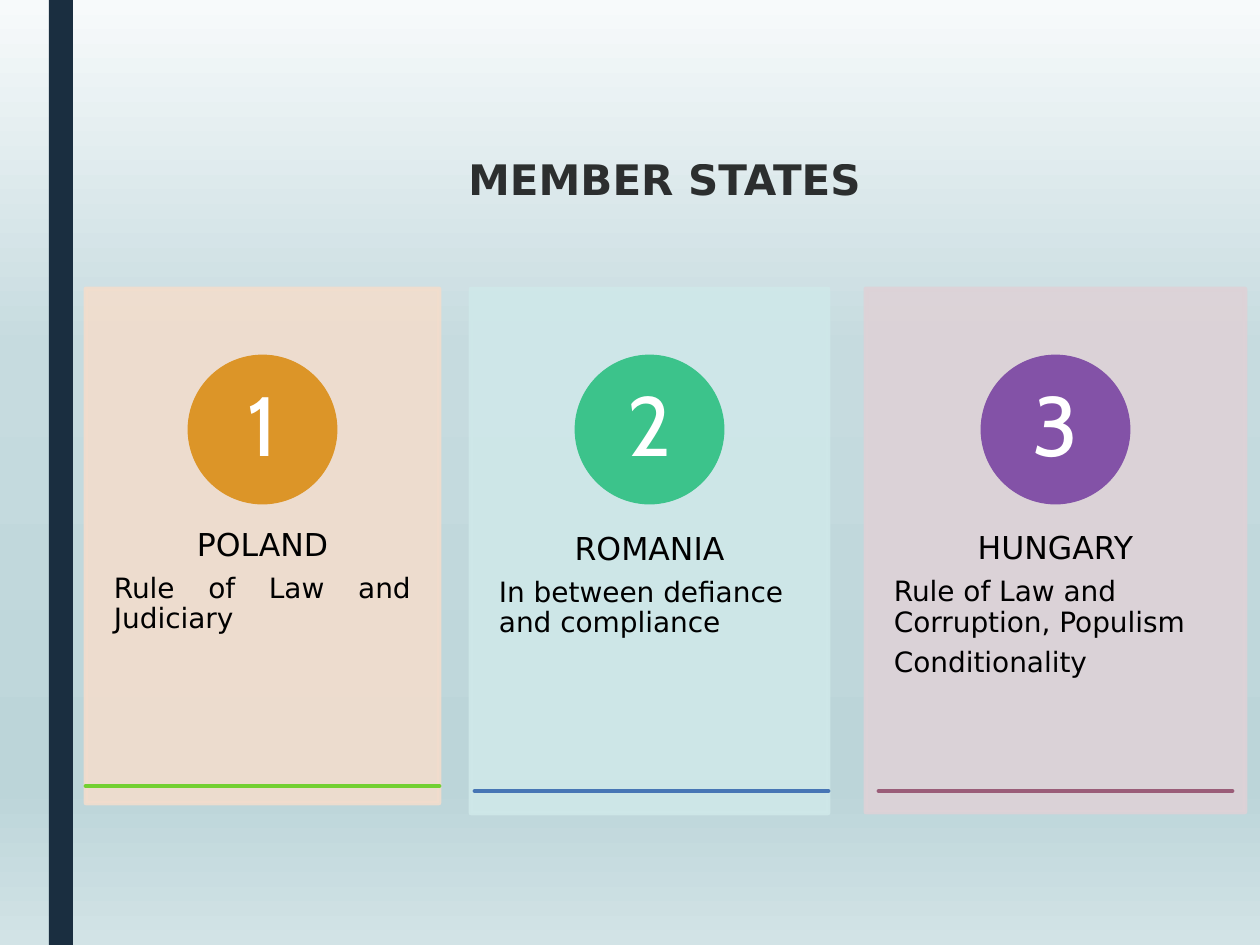
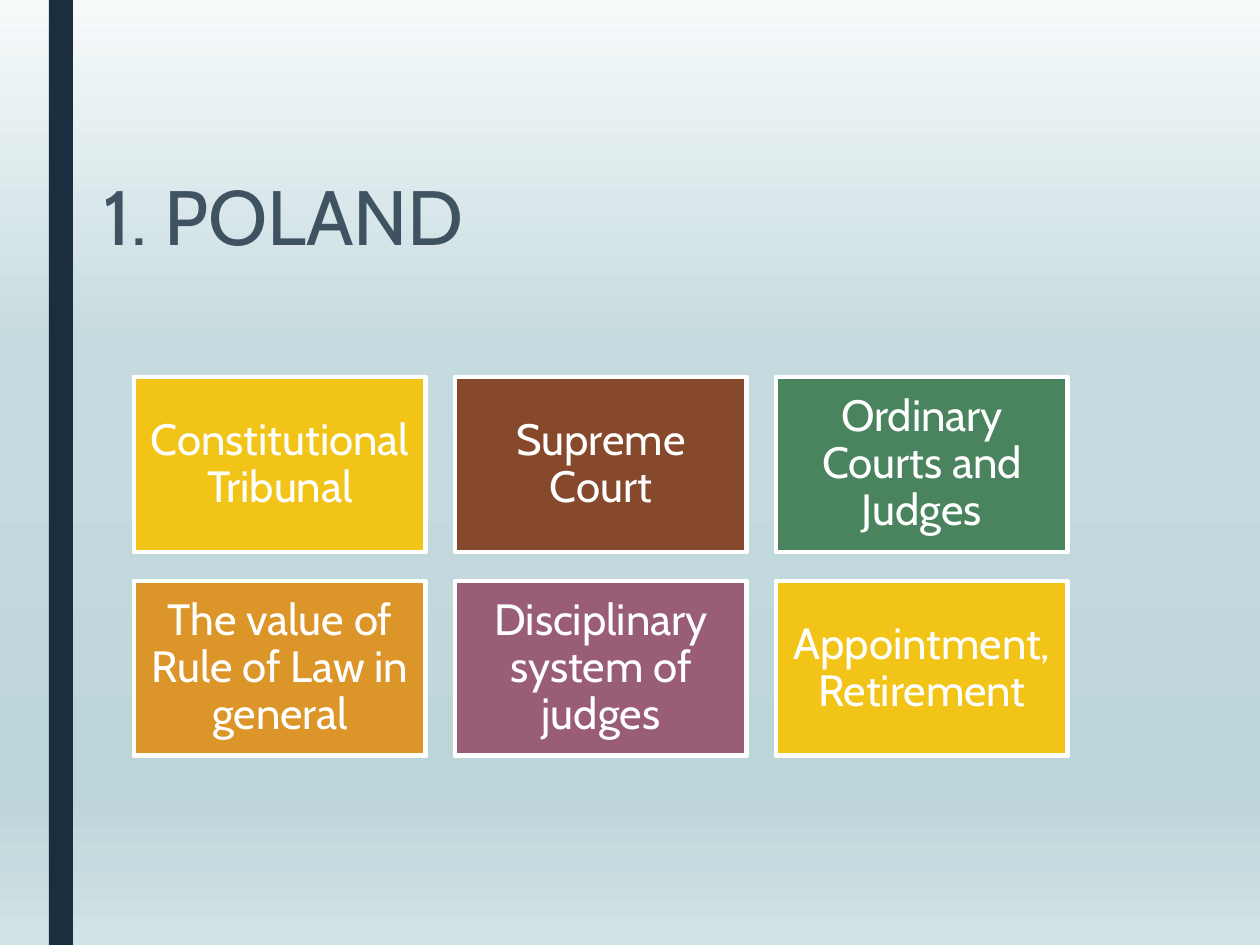
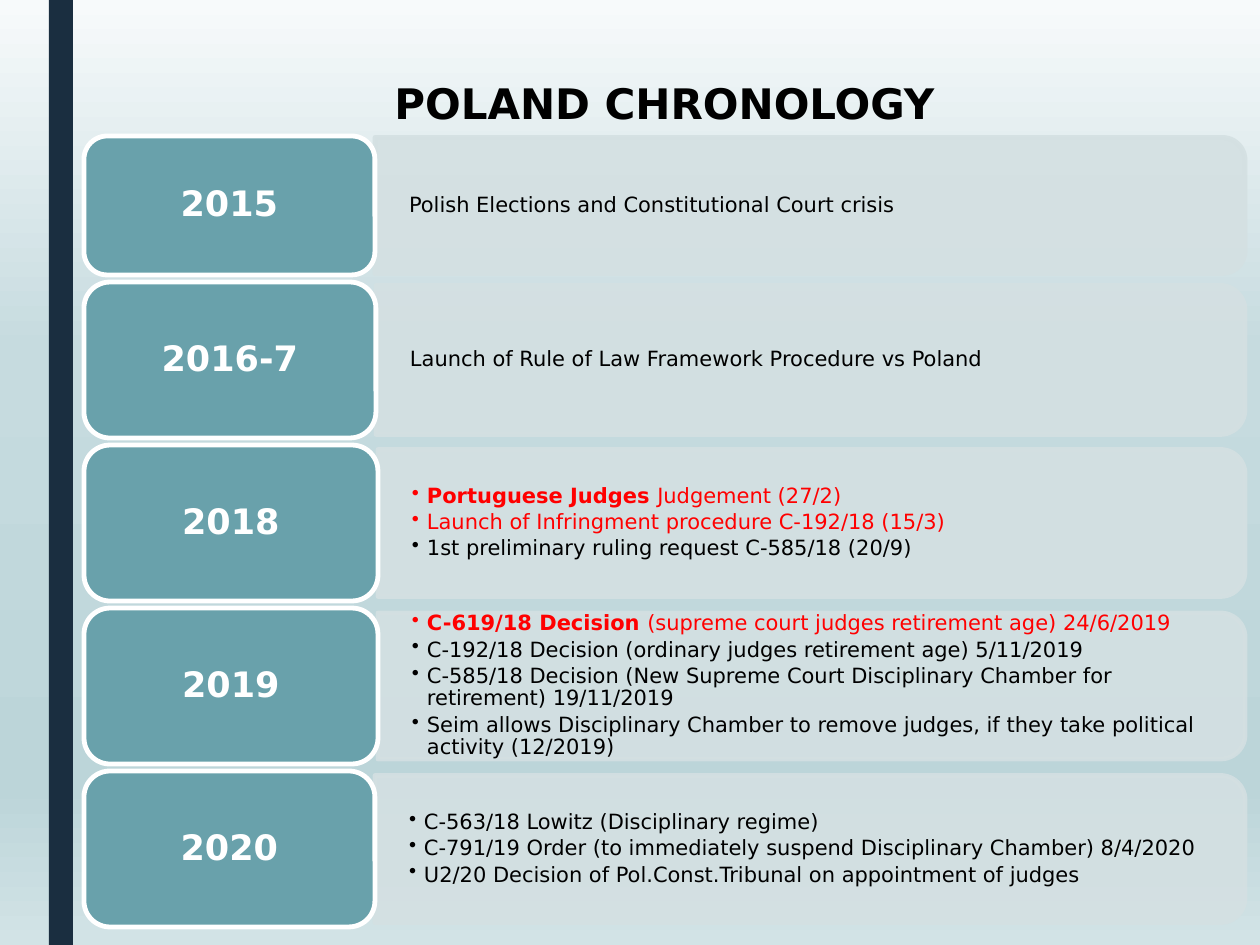
from lxml import etree
from pptx import Presentation
from pptx import util as u
from pptx.dml.color import RGBColor
from pptx.enum import shapes, text
from pptx.oxml.ns import qn

PX = 914400 / 126
SLIDE_WIDTH, SLIDE_HEIGHT = 1260, 945
SANS, CABIN = "DejaVu Sans", "Cabin"
NAVY, BLACK, WHITE, RED = "1A2E40", "000000", "FFFFFF", "FF0000"
TEAL, MIST = "69A1AB", "D4E0E2"
YELLOW, BROWN, GREEN, ORANGE, PLUM = "F2C418", "87492C", "4A845E", "DC9528", "9A5D78"
BACKGROUND_STOPS = [(0, "F7FAFB"), (37, "C6DBDF"), (83, "BCD5D9"), (100, "D2E3E6")]
LINE_WIDTH = u.Pt(2.75)
LEFT, CENTER, JUSTIFY = text.PP_ALIGN.LEFT, text.PP_ALIGN.CENTER, text.PP_ALIGN.JUSTIFY
TOP, MIDDLE, BOTTOM = text.MSO_ANCHOR.TOP, text.MSO_ANCHOR.MIDDLE, text.MSO_ANCHOR.BOTTOM
SHAPE = shapes.MSO_SHAPE


def px(*lengths):
    return [u.Emu(round(length * PX)) for length in lengths]


def paint(fill, color, opacity=100):
    fill.solid()
    fill.fore_color.rgb = RGBColor.from_string(color)
    if opacity < 100:
        color_element = fill._xPr.find(f"{qn('a:solidFill')}/{qn('a:srgbClr')}")
        etree.SubElement(color_element, qn("a:alpha"), val=str(opacity * 1000))


def set_frame(shape, insets=(13, 6), anchor=TOP):
    """Wrap the text, with horizontal and vertical insets in px."""
    frame = shape.text_frame
    frame.word_wrap = True
    frame.vertical_anchor = anchor
    frame.margin_left, frame.margin_top = px(*insets)
    frame.margin_right, frame.margin_bottom = px(*insets)
    return frame


def write(frame, words, size, color, face=SANS, bold=False, align=CENTER,
          spacing=0.9, after=0, opacity=100):
    """Fill the frame's first paragraph, or add one if it is taken."""
    paragraph = frame.paragraphs[0]
    if paragraph.runs:
        paragraph = frame.add_paragraph()
    paragraph.add_run().text = words
    paragraph.alignment = align
    paragraph.line_spacing = spacing
    paragraph.space_after = u.Pt(after)
    font = paragraph.font
    font.name, font.size, font.bold = face, u.Pt(size), bold
    paint(font.fill, color, opacity)
    return paragraph


def add_block(slide, kind, box, color, line=None, opacity=100):
    shape = slide.shapes.add_shape(kind, *px(*box))
    shape.shadow.inherit = False
    paint(shape.fill, color, opacity)
    if line:
        paint(shape.line.fill, line, opacity)
        shape.line.width = LINE_WIDTH
    else:
        shape.line.fill.background()
    return shape


def add_rule(slide, left, top, width, color):
    rule = slide.shapes.add_connector(
        shapes.MSO_CONNECTOR.STRAIGHT, *px(left, top, left + width, top))
    paint(rule.line.fill, color)
    rule.line.width = LINE_WIDTH
    properties = rule.element.spPr
    properties.find(qn("a:ln")).set("cap", "rnd")
    etree.SubElement(properties, qn("a:effectLst"))


def add_title(slide, box, words, size=24, color=BLACK, anchor=TOP, insets=(13, 6), **style):
    frame = set_frame(slide.shapes.add_textbox(*px(*box)), insets, anchor)
    write(frame, words, size, color, spacing=0.89, **style)


def set_background(master):
    fill = master.background.fill
    fill.gradient()
    fill.gradient_angle = 270
    stops = master.element.find(".//" + qn("a:gsLst"))
    for stop in list(stops):
        stops.remove(stop)
    for position, color in BACKGROUND_STOPS:
        stop = etree.SubElement(stops, qn("a:gs"), pos=str(position * 1000))
        etree.SubElement(stop, qn("a:srgbClr"), val=color)


def add_slide(presentation):
    slide = presentation.slides.add_slide(presentation.slide_layouts[6])
    add_block(slide, SHAPE.RECTANGLE, (49, 0, 24, SLIDE_HEIGHT), NAVY)
    return slide


def add_state_card(slide, box, number, state, topics, align, colors, rule_offset):
    left, top, width, height = box
    card_color, circle_color, rule_color = colors
    add_block(slide, SHAPE.RECTANGLE, box, card_color, card_color, 90)

    text_box = slide.shapes.add_textbox(
        *px(left, top + 0.38 * height, width, 0.6 * height))
    frame = set_frame(text_box, (28, 45))
    write(frame, state, 18, BLACK, after=6.3)
    for topic in topics:
        write(frame, topic, 16, BLACK, align=align, after=5.6)

    diameter = 145
    circle = add_block(
        slide, SHAPE.OVAL, (left + (width - diameter) / 2, top + 68, diameter, diameter),
        circle_color, circle_color)
    write(set_frame(circle, (0, 0), MIDDLE), number, 48, WHITE, CABIN)

    rule_left, rule_top = rule_offset
    add_rule(slide, left + rule_left, top + rule_top, 353, rule_color)


def build_member_states(presentation):
    slide = add_slide(presentation)
    add_title(slide, (84, 154, 1161, 155), "MEMBER STATES", bold=True, opacity=80)
    add_state_card(slide, (86, 289, 353, 514), "1", "POLAND",
                   ["Rule of Law and Judiciary"], JUSTIFY,
                   ("F2DDCD", ORANGE, "72D032"), (0, 497))
    add_state_card(slide, (471, 289, 357, 524), "2", "ROMANIA",
                   ["In between defiance and compliance"], LEFT,
                   ("CFE8E9", "3CC38B", "4776B5"), (4, 502))
    add_state_card(slide, (866, 289, 379, 523), "3", "HUNGARY",
                   ["Rule of Law and Corruption, Populism", "Conditionality"], LEFT,
                   ("DED2D7", "8352A7", PLUM), (13, 502))


def add_issue_grid(slide, left, top, issues, columns=3):
    width, height, gap = 292, 175, 29
    for index, (issue, color) in enumerate(issues):
        row, column = divmod(index, columns)
        box = (left + column * (width + gap), top + row * (height + gap), width, height)
        tile = add_block(slide, SHAPE.RECTANGLE, box, color, WHITE)
        write(set_frame(tile, (13, 13), MIDDLE), issue, 25, WHITE, CABIN)


def build_poland_issues(presentation):
    slide = add_slide(presentation)
    add_title(slide, (95, 175, 1110, 166), "1. POLAND", 44, NAVY, insets=(9, 5),
              face=CABIN, align=LEFT, opacity=80)
    add_issue_grid(slide, 134, 377, [
        ("Constitutional Tribunal", YELLOW),
        ("Supreme Court", BROWN),
        ("Ordinary Courts and Judges", GREEN),
        ("The value of Rule of Law in general", ORANGE),
        ("Disciplinary system of judges", PLUM),
        ("Appointment, Retirement", YELLOW),
    ])


def add_bullet(paragraph):
    properties = paragraph._p.get_or_add_pPr()
    indent, = px(15)
    properties.set("marL", str(indent))
    properties.set("indent", str(-indent))
    bullet = etree.Element(qn("a:buChar"), char="•")
    properties.find(qn("a:defRPr")).addprevious(bullet)


def add_year_row(slide, box, year, year_width, panel_height, events):
    """Each event is a colour, a bold lead and the rest; several events get bullets."""
    left, top, width, height = box
    panel_left, panel_width = left + year_width, width - year_width
    middle = top + height / 2
    panel = add_block(
        slide, SHAPE.ROUND_2_SAME_RECTANGLE,
        (panel_left + (panel_width - panel_height) / 2, middle - panel_width / 2,
         panel_height, panel_width), MIST, MIST, 90)
    panel.rotation = 90

    text_height = panel_height - 14
    text_box = slide.shapes.add_textbox(
        *px(panel_left, middle - text_height / 2, panel_width - 7, text_height))
    frame = set_frame(text_box, (34, 18), MIDDLE)
    for color, lead, rest in events:
        paragraph = write(frame, lead or rest, 12, color, align=LEFT, after=2)
        if lead:
            paragraph.runs[0].font.bold = True
            paragraph.add_run().text = rest
        if len(events) > 1:
            add_bullet(paragraph)

    badge = add_block(slide, SHAPE.ROUNDED_RECTANGLE, (left, top, year_width, height),
                      TEAL, WHITE)
    write(set_frame(badge, (10, 5), MIDDLE), year, 20, WHITE, bold=True)


def build_chronology(presentation):
    slide = add_slide(presentation)
    add_title(slide, (84, 45, 1161, 90), "POLAND CHRONOLOGY", anchor=BOTTOM, bold=True)
    rows = [
        ("2015", 139, 291, 136, [
            (BLACK, "", "Polish Elections and Constitutional Court crisis")]),
        ("2016-7", 156, 292, 149, [
            (BLACK, "", "Launch of Rule of Law Framework Procedure vs Poland")]),
        ("2018", 156, 294, 147, [
            (RED, "Portuguese Judges ", "Judgement (27/2)"),
            (RED, "", "Launch of Infringment procedure C-192/18 (15/3)"),
            (BLACK, "", "1st preliminary ruling request C-585/18 (20/9)")]),
        ("2019", 156, 294, 146, [
            (RED, "C-619/18 Decision ", "(supreme court judges retirement age) 24/6/2019"),
            (BLACK, "", "C-192/18 Decision (ordinary judges retirement age) 5/11/2019"),
            (BLACK, "", "C-585/18 Decision (New Supreme Court Disciplinary Chamber for "
                        "retirement) 19/11/2019"),
            (BLACK, "", "Seim allows Disciplinary Chamber to remove judges, if they take "
                        "political activity (12/2019)")]),
        ("2020", 156, 291, 147, [
            (BLACK, "", "C-563/18 Lowitz (Disciplinary regime)"),
            (BLACK, "", "C-791/19 Order (to immediately suspend Disciplinary Chamber) "
                        "8/4/2020"),
            (BLACK, "", "U2/20 Decision of Pol.Const.Tribunal on appointment of judges")]),
    ]
    top, gap = 136, 7
    for year, height, year_width, panel_height, events in rows:
        add_year_row(slide, (84, top, 1161, height), year, year_width, panel_height, events)
        top += height + gap


def main():
    presentation = Presentation()
    presentation.slide_width, presentation.slide_height = px(SLIDE_WIDTH, SLIDE_HEIGHT)
    set_background(presentation.slide_master)
    build_member_states(presentation)
    build_poland_issues(presentation)
    build_chronology(presentation)
    presentation.save("out.pptx")


if __name__ == "__main__":
    main()
